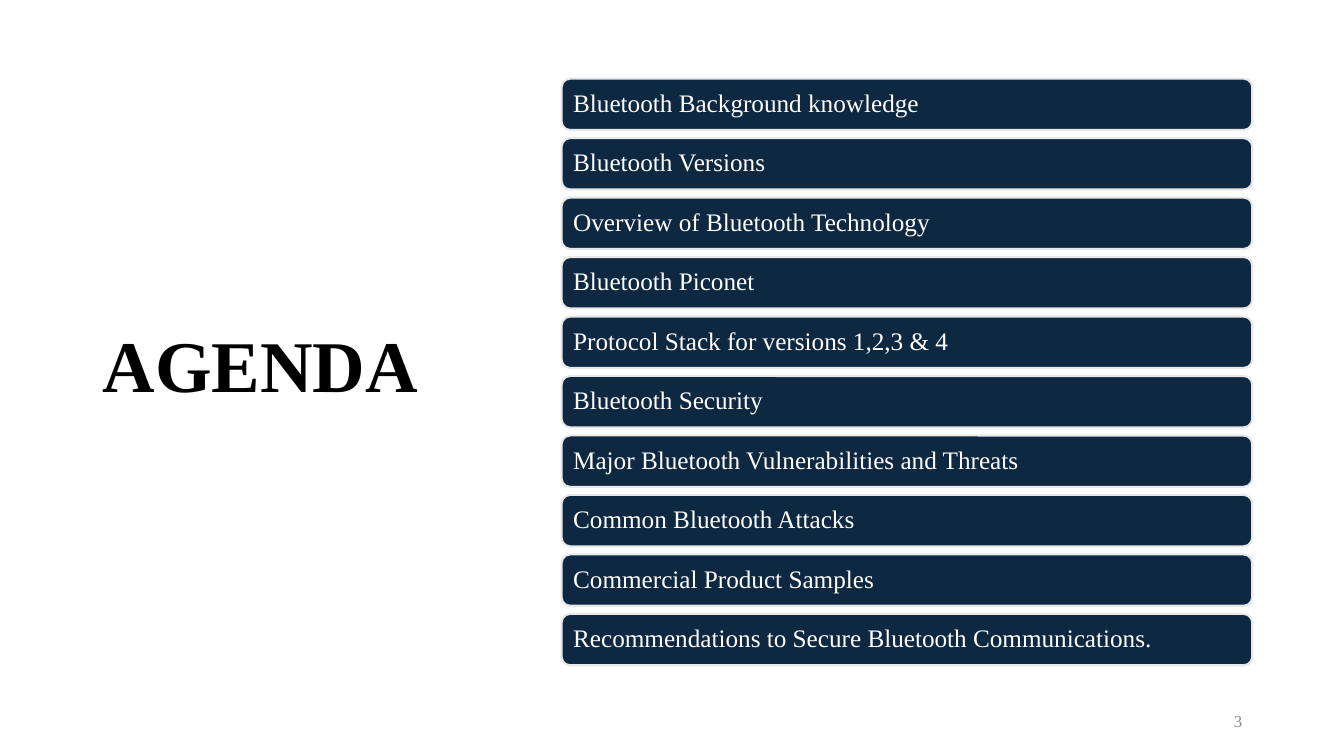
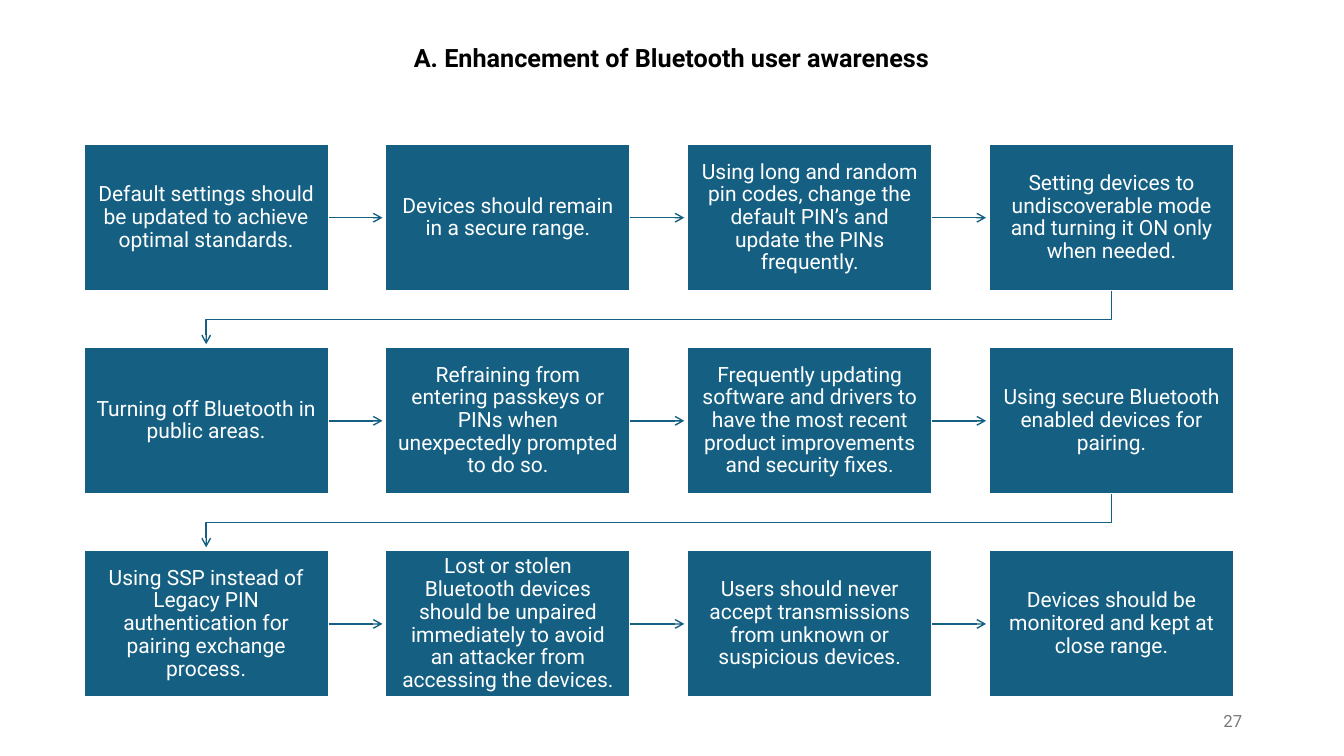
from dataclasses import dataclass

from pptx import Presentation
from pptx.dml.color import RGBColor
from pptx.enum.shapes import MSO_CONNECTOR, MSO_SHAPE
from pptx.enum.text import MSO_ANCHOR, MSO_AUTO_SIZE, PP_ALIGN
from pptx.oxml.ns import qn
from pptx.util import Inches, Pt
from lxml.etree import SubElement

AGENDA = {
    "title": "AGENDA",
    "number": "3",
    "items": [
        "Bluetooth Background knowledge",
        "Bluetooth Versions",
        "Overview of Bluetooth Technology",
        "Bluetooth Piconet",
        "Protocol Stack for versions 1,2,3 & 4",
        "Bluetooth Security",
        "Major Bluetooth Vulnerabilities and Threats",
        "Common Bluetooth Attacks",
        "Commercial Product Samples",
        "Recommendations to Secure Bluetooth Communications.",
    ],
}

AWARENESS = {
    "title": "A. Enhancement of Bluetooth user awareness",
    "number": "27",
    "rows": [
        [
            "Default settings should be updated to achieve optimal standards.",
            "Devices should remain in a secure range.",
            "Using long and random pin codes, change the default PIN’s and update the PINs frequently.",
            "Setting devices to undiscoverable mode and turning it ON only when needed.",
        ],
        [
            "Turning off Bluetooth in public areas.",
            "Refraining from entering passkeys or PINs when unexpectedly prompted to do so.",
            "Frequently updating software and drivers to have the most recent product improvements and security fixes.",
            "Using secure Bluetooth enabled devices for pairing.",
        ],
        [
            "Using SSP instead of Legacy PIN authentication for pairing exchange process.",
            "Lost or stolen Bluetooth devices should be unpaired immediately to avoid an attacker from accessing the devices.",
            "Users should never accept transmissions from unknown or suspicious devices.",
            "Devices should be monitored and kept at close range.",
        ],
    ],
}


@dataclass(frozen=True)
class Theme:
    serif: str = "Times New Roman"
    sans: str = "Roboto"
    black: str = "000000"
    white: str = "FFFFFF"
    navy: str = "0E2841"
    teal: str = "156082"
    pale: str = "E8E8E8"
    light_gray: str = "8C8C8C"
    gray: str = "797979"
    headline: int = 52
    heading: int = 18
    bar: int = 18
    step: int = 15
    number: int = 12
    outline: float = 1.5
    arrow: float = 1
    tight: float = 0.9


T = Theme()
BARS = (5.57, 0.78, 6.85, 5.82)
BAR_H = 0.51
STEPS = (0.83, 1.43, 11.41, 5.49)
STEP_W, STEP_H = 2.43, 1.46
TIP_GAP = 0.03


def rgb(color):
    return RGBColor.from_string(color)


def spread(start, extent, size, count):
    pitch = (extent - size) / (count - 1)
    return [start + i * pitch for i in range(count)]


def write(sp, text, font, size, color, align=PP_ALIGN.LEFT, bold=False,
          spacing=1.0, insets=(0.1, 0.05)):
    tf = sp.text_frame
    tf.word_wrap = True
    tf.auto_size = MSO_AUTO_SIZE.NONE
    tf.vertical_anchor = MSO_ANCHOR.MIDDLE
    tf.margin_left = tf.margin_right = Inches(insets[0])
    tf.margin_top = tf.margin_bottom = Inches(insets[1])
    p = tf.paragraphs[0]
    p.text = text
    p.alignment, p.line_spacing = align, spacing
    p.font.name, p.font.size, p.font.bold = font, Pt(size), bold
    p.font.color.rgb = rgb(color)


def new_slide(prs, content, title_box, title_style, number_font, number_color):
    s = prs.slides.add_slide(prs.slide_layouts[5])
    title = s.shapes.title
    title.left, title.top, title.width, title.height = map(Inches, title_box)
    write(title, content["title"], color=T.black, bold=True, **title_style)
    number = s.shapes.add_textbox(*map(Inches, (9.42, 6.95, 3, 0.4)))
    write(number, content["number"], number_font, T.number, number_color, PP_ALIGN.RIGHT)
    return s


def add_box(s, preset, box, fill, line):
    sp = s.shapes.add_shape(preset, *map(Inches, box))
    sp.shadow.inherit = False
    sp.fill.solid()
    sp.fill.fore_color.rgb = rgb(fill)
    sp.line.color.rgb = rgb(line)
    sp.line.width = Pt(T.outline)
    return sp


def style_arrow(sp):
    sp.line.color.rgb = rgb(T.teal)
    sp.line.width = Pt(T.arrow)
    SubElement(sp.line._get_or_add_ln(), qn("a:tailEnd"), type="arrow")


def arrow_right(s, source, target):
    y = source.top + source.height // 2
    cxn = s.shapes.add_connector(MSO_CONNECTOR.STRAIGHT, source.left + source.width, y,
                                 target.left - Inches(TIP_GAP), y)
    cxn.begin_connect(source, 3)
    style_arrow(cxn)
    SubElement(cxn._element.spPr, qn("a:effectLst"))


def arrow_to_next_row(s, source, target):
    x1, x2 = (sp.left + sp.width // 2 for sp in (source, target))
    y1, y2 = source.top + source.height, target.top
    middle = (y1 + y2) // 2
    builder = s.shapes.build_freeform(x1, y1)
    builder.add_line_segments([(x1, middle), (x2, middle), (x2, y2 - Inches(TIP_GAP))],
                              close=False)
    sp = builder.convert_to_shape()
    sp.shadow.inherit = False
    sp.fill.background()
    style_arrow(sp)


def build_agenda(prs):
    style = dict(font=T.serif, size=T.headline, spacing=T.tight)
    s = new_slide(prs, AGENDA, (0.92, 0.61, 3.69, 6.09), style, T.serif, T.light_gray)
    left, top, width, height = BARS
    items = AGENDA["items"]
    for text, y in zip(items, spread(top, height, BAR_H, len(items))):
        sp = add_box(s, MSO_SHAPE.ROUNDED_RECTANGLE, (left, y, width, BAR_H), T.navy, T.pale)
        write(sp, text, T.serif, T.bar, T.white, spacing=T.tight, insets=(0.09, 0.09))


def build_awareness(prs):
    style = dict(font=T.sans, size=T.heading, align=PP_ALIGN.CENTER)
    s = new_slide(prs, AWARENESS, (3.89, 0.37, 5.54, 0.4), style, T.sans, T.gray)
    left, top, width, height = STEPS
    rows = AWARENESS["rows"]
    xs = spread(left, width, STEP_W, len(rows[0]))
    ys = spread(top, height, STEP_H, len(rows))
    steps = []
    for row, y in zip(rows, ys):
        for text, x in zip(row, xs):
            sp = add_box(s, MSO_SHAPE.RECTANGLE, (x, y, STEP_W, STEP_H), T.teal, T.white)
            write(sp, text, T.sans, T.step, T.white, PP_ALIGN.CENTER,
                  spacing=T.tight, insets=(0.12, 0.13))
            steps.append(sp)
    for source, target in zip(steps, steps[1:]):
        link = arrow_right if source.top == target.top else arrow_to_next_row
        link(s, source, target)


def main():
    prs = Presentation()
    prs.slide_width, prs.slide_height = Inches(13.33), Inches(7.5)
    build_agenda(prs)
    build_awareness(prs)
    prs.save("out.pptx")


if __name__ == "__main__":
    main()
